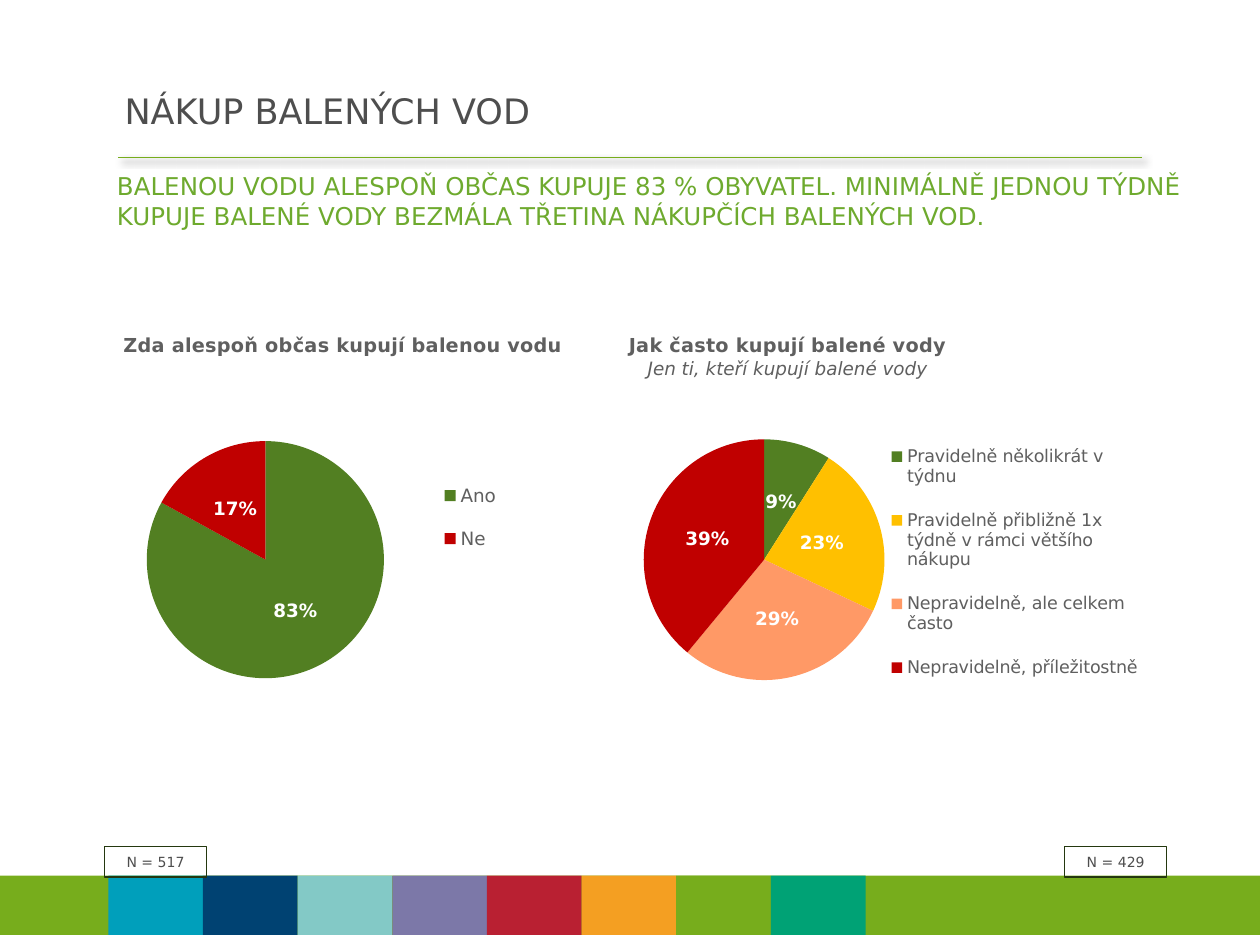
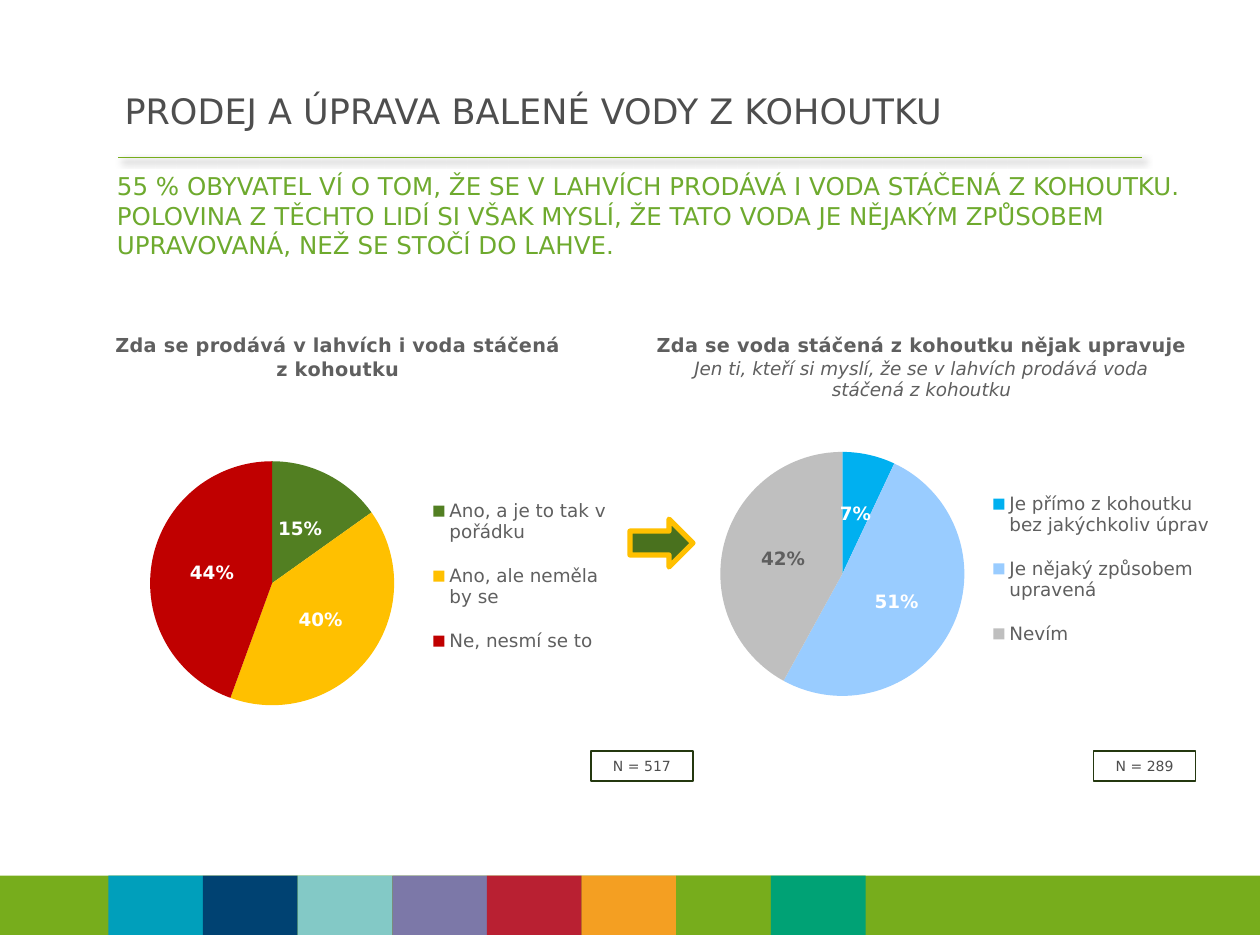
from dataclasses import dataclass

from lxml import etree
from pptx import Presentation
from pptx.chart.data import CategoryChartData
from pptx.dml.color import RGBColor
from pptx.enum.chart import XL_CHART_TYPE as ChartType
from pptx.enum.chart import XL_LABEL_POSITION as LabelPosition
from pptx.enum.chart import XL_LEGEND_POSITION as LegendPosition
from pptx.enum.shapes import MSO_CONNECTOR as Connector
from pptx.enum.shapes import MSO_SHAPE as Shape
from pptx.enum.text import MSO_ANCHOR as Anchor
from pptx.enum.text import PP_ALIGN as Align
from pptx.oxml import parse_xml
from pptx.oxml.ns import qn
from pptx.util import Inches, Pt


@dataclass(frozen=True)
class Theme:
    font: str = "DejaVu Sans"
    title: str = "4E4E4E"
    headline: str = "6EAA2E"
    chart_text: str = "5F5F5F"
    white: str = "FFFFFF"
    band: str = "77AD1C"
    stripes: tuple = ("009FBB", "004272", "83C9C6", "7C78A8",
                      "B92032", "F49F22", "77AD1C", "00A275")
    tag_border: str = "24380F"
    green: str = "527F22"
    amber: str = "FFC000"
    salmon: str = "FF9966"
    red: str = "C00000"
    blue: str = "00B0F0"
    pale_blue: str = "99CCFF"
    grey: str = "BFBFBF"
    arrow: str = "49711E"
    title_size: float = 20
    headline_size: float = 14
    chart_title_size: float = 11
    chart_size: float = 10.5
    tag_size: float = 8


THEME = Theme()
CHART_TOP, CHART_HEIGHT = 2.57, 3.53
PIE_SIZE = (0.362, 0.597)
BAND_TOP, BAND_HEIGHT = 6.95, 0.47
STRIPES_LEFT, STRIPES_RIGHT = 0.86, 6.87


def rgb(value):
    return RGBColor.from_string(value)


def set_font(font, size, color, bold=False, italic=False):
    font.name = THEME.font
    font.size = Pt(size)
    font.color.rgb = rgb(color)
    font.bold = bold
    font.italic = italic


def add_shape(slide, kind, box, fill=None, line=None, line_width=0.75):
    shape = slide.shapes.add_shape(kind, *map(Inches, box))
    shape.shadow.inherit = False
    if fill:
        shape.fill.solid()
        shape.fill.fore_color.rgb = rgb(fill)
    else:
        shape.fill.background()
    if line:
        shape.line.color.rgb = rgb(line)
        shape.line.width = Pt(line_width)
    else:
        shape.line.fill.background()
    return shape


def add_text(slide, box, text, size, color, anchor=Anchor.TOP):
    frame = slide.shapes.add_textbox(*map(Inches, box)).text_frame
    frame.word_wrap = True
    frame.vertical_anchor = anchor
    paragraph = frame.paragraphs[0]
    paragraph.text = text
    set_font(paragraph.font, size, color)
    return paragraph


def add_title_rule(slide):
    """Thin line under the title with a soft shadow."""
    rule = slide.shapes.add_connector(
        Connector.STRAIGHT, Inches(0.94), Inches(1.25), Inches(9.06), Inches(1.25))
    rule.line.color.rgb = rgb(THEME.band)
    rule.line.width = Pt(0.75)
    effects = etree.SubElement(rule.element.spPr, qn("a:effectLst"))
    shadow = etree.SubElement(
        effects, qn("a:outerShdw"), blurRad=str(Pt(4)), dist=str(Pt(3)),
        dir=str(45 * 60000), algn="tl", rotWithShape="0")
    color = etree.SubElement(shadow, qn("a:srgbClr"), val="000000")
    etree.SubElement(color, qn("a:alpha"), val="40000")


def add_footer_band(slide):
    add_shape(slide, Shape.RECTANGLE, (0, BAND_TOP, 10, BAND_HEIGHT), THEME.band)
    width = (STRIPES_RIGHT - STRIPES_LEFT) / len(THEME.stripes)
    for index, color in enumerate(THEME.stripes):
        left = STRIPES_LEFT + index * width
        add_shape(slide, Shape.RECTANGLE, (left, BAND_TOP, width, BAND_HEIGHT), color)


def add_slide(presentation, title, headline):
    slide = presentation.slides.add_slide(presentation.slide_layouts[6])
    add_title_rule(slide)
    add_footer_band(slide)
    paragraph = add_text(slide, (0.89, 0.62, 8.87, 0.51), title,
                         THEME.title_size, THEME.title, Anchor.MIDDLE)
    paragraph.space_after = Pt(3)
    add_text(slide, (0.83, 1.31, 8.82, 0.8), headline,
             THEME.headline_size, THEME.headline)
    return slide


def add_sample_tag(slide, left, top, count):
    tag = add_shape(slide, Shape.RECTANGLE, (left, top, 0.81, 0.24),
                    line=THEME.tag_border)
    paragraph = tag.text_frame.paragraphs[0]
    paragraph.text = f"N = {count}"
    paragraph.alignment = Align.CENTER
    set_font(paragraph.font, THEME.tag_size, THEME.title)


def set_layout(element, index, x, y, width=None, height=None, inner=False):
    """Place a chart part by fractions of the chart's size."""
    for old in element.findall(qn("c:layout")):
        element.remove(old)
    layout = parse_xml(
        '<c:layout xmlns:c="http://schemas.openxmlformats.org/drawingml/2006/chart">'
        "<c:manualLayout/></c:layout>")
    settings = [("layoutTarget", "inner")] if inner else []
    settings += [("xMode", "edge"), ("yMode", "edge"), ("x", x), ("y", y)]
    if width:
        settings += [("w", width), ("h", height)]
    for name, value in settings:
        etree.SubElement(layout[0], qn(f"c:{name}"), val=str(value))
    element.insert(index, layout)


def add_chart_title(chart, left, lines, subtitle):
    frame = chart.chart_title.text_frame
    texts = [(line, False) for line in lines]
    if subtitle:
        texts.append((subtitle, True))
    for index, (text, is_subtitle) in enumerate(texts):
        paragraph = frame.add_paragraph() if index else frame.paragraphs[0]
        run = paragraph.add_run()
        run.text = text
        size = THEME.chart_size if is_subtitle else THEME.chart_title_size
        set_font(run.font, size, THEME.chart_text, not is_subtitle, is_subtitle)
    set_layout(chart.element.xpath("c:chart/c:title")[0], 1, left, 0.01)


def add_pie(slide, left, width, title_left, title, slices, pie_at, legend_box,
            subtitle=None, legend_size=THEME.chart_size, dark_label=None):
    """Pie of (category, value, colour) slices; dark_label is a slice index."""
    data = CategoryChartData(number_format="0%")
    data.categories = [category for category, _, _ in slices]
    data.add_series("Series 1", [value for _, value, _ in slices])
    chart = slide.shapes.add_chart(
        ChartType.PIE, Inches(left), Inches(CHART_TOP), Inches(width),
        Inches(CHART_HEIGHT), data).chart
    set_font(chart.font, THEME.chart_size, THEME.chart_text)
    add_chart_title(chart, title_left, title, subtitle)
    set_layout(chart.element.xpath("c:chart/c:plotArea")[0], 0,
               *pie_at, *PIE_SIZE, inner=True)

    chart.has_legend = True
    chart.legend.position = LegendPosition.RIGHT
    chart.legend.include_in_layout = False
    set_font(chart.legend.font, legend_size, THEME.chart_text)
    set_layout(chart.element.xpath("c:chart/c:legend")[0], 1, *legend_box)

    plot = chart.plots[0]
    plot.vary_by_categories = True
    series = plot.series[0]
    for index, (_, _, color) in enumerate(slices):
        fill = series.points[index].format.fill
        fill.solid()
        fill.fore_color.rgb = rgb(color)
    labels = series.data_labels
    labels.show_value = True
    labels.number_format = "0%"
    labels.number_format_is_linked = False
    labels.position = LabelPosition.CENTER
    set_font(labels.font, THEME.chart_size, THEME.white, bold=True)
    if dark_label is not None:
        label = series.points[dark_label].data_label
        set_font(label.font, THEME.chart_size, THEME.chart_text, bold=True)
        label.position = LabelPosition.CENTER


def add_purchase_slide(presentation):
    slide = add_slide(
        presentation, "NÁKUP BALENÝCH VOD",
        "BALENOU VODU ALESPOŇ OBČAS KUPUJE 83 % OBYVATEL. MINIMÁLNĚ JEDNOU TÝDNĚ "
        "KUPUJE BALENÉ VODY BEZMÁLA TŘETINA NÁKUPČÍCH BALENÝCH VOD.")
    add_pie(slide, 0.25, 5.2, 0.135, ["Zda alespoň občas kupují balenou vodu"],
            [("Ano", 0.83, THEME.green), ("Ne", 0.17, THEME.red)],
            (0.176, 0.232), (0.61, 0.313, 0.12, 0.243))
    add_pie(slide, 4.18, 5.28, 0.148, ["Jak často kupují balené vody"],
            [("Pravidelně několikrát v týdnu", 0.09, THEME.green),
             ("Pravidelně přibližně 1x týdně v rámci většího nákupu", 0.23, THEME.amber),
             ("Nepravidelně, ale celkem často", 0.29, THEME.salmon),
             ("Nepravidelně, příležitostně", 0.39, THEME.red)],
            (0.176, 0.232), (0.537, 0.222, 0.393, 0.628),
            subtitle="Jen ti, kteří kupují balené vody", legend_size=10)
    add_sample_tag(slide, 0.83, 6.72, 517)
    add_sample_tag(slide, 8.45, 6.72, 429)


def add_tap_water_slide(presentation):
    slide = add_slide(
        presentation, "PRODEJ A ÚPRAVA BALENÉ VODY Z KOHOUTKU",
        "55 % OBYVATEL VÍ O TOM, ŽE SE V LAHVÍCH PRODÁVÁ I VODA STÁČENÁ Z KOHOUTKU. "
        "POLOVINA Z TĚCHTO LIDÍ SI VŠAK MYSLÍ, ŽE TATO VODA JE NĚJAKÝM ZPŮSOBEM "
        "UPRAVOVANÁ, NEŽ SE STOČÍ DO LAHVE.")
    add_pie(slide, 5, 5.35, 0.034, ["Zda se voda stáčená z kohoutku nějak upravuje"],
            [("Je přímo z kohoutku bez jakýchkoliv úprav", 0.07, THEME.blue),
             ("Je nějaký způsobem upravená", 0.51, THEME.pale_blue),
             ("Nevím", 0.42, THEME.grey)],
            (0.134, 0.264), (0.527, 0.33, 0.345, 0.443),
            subtitle="Jen ti, kteří si myslí, že se v lahvích prodává voda "
                     "stáčená z kohoutku", dark_label=2)
    add_pie(slide, 0.71, 5.35, 0.033,
            ["Zda se prodává v lahvích i voda stáčená", "z kohoutku"],
            [("Ano, a je to tak v pořádku", 0.15, THEME.green),
             ("Ano, ale neměla by se", 0.4, THEME.amber),
             ("Ne, nesmí se to", 0.44, THEME.red)],
            (0.09, 0.285), (0.505, 0.346, 0.267, 0.443))
    add_shape(slide, Shape.RIGHT_ARROW, (5, 4.12, 0.5, 0.38),
              THEME.arrow, THEME.amber, 3)
    add_sample_tag(slide, 4.69, 5.96, 517)
    add_sample_tag(slide, 8.68, 5.96, 289)


def main():
    presentation = Presentation()
    presentation.slide_width = Inches(10)
    presentation.slide_height = Inches(7.5)
    add_purchase_slide(presentation)
    add_tap_water_slide(presentation)
    presentation.save("out.pptx")


if __name__ == "__main__":
    main()
